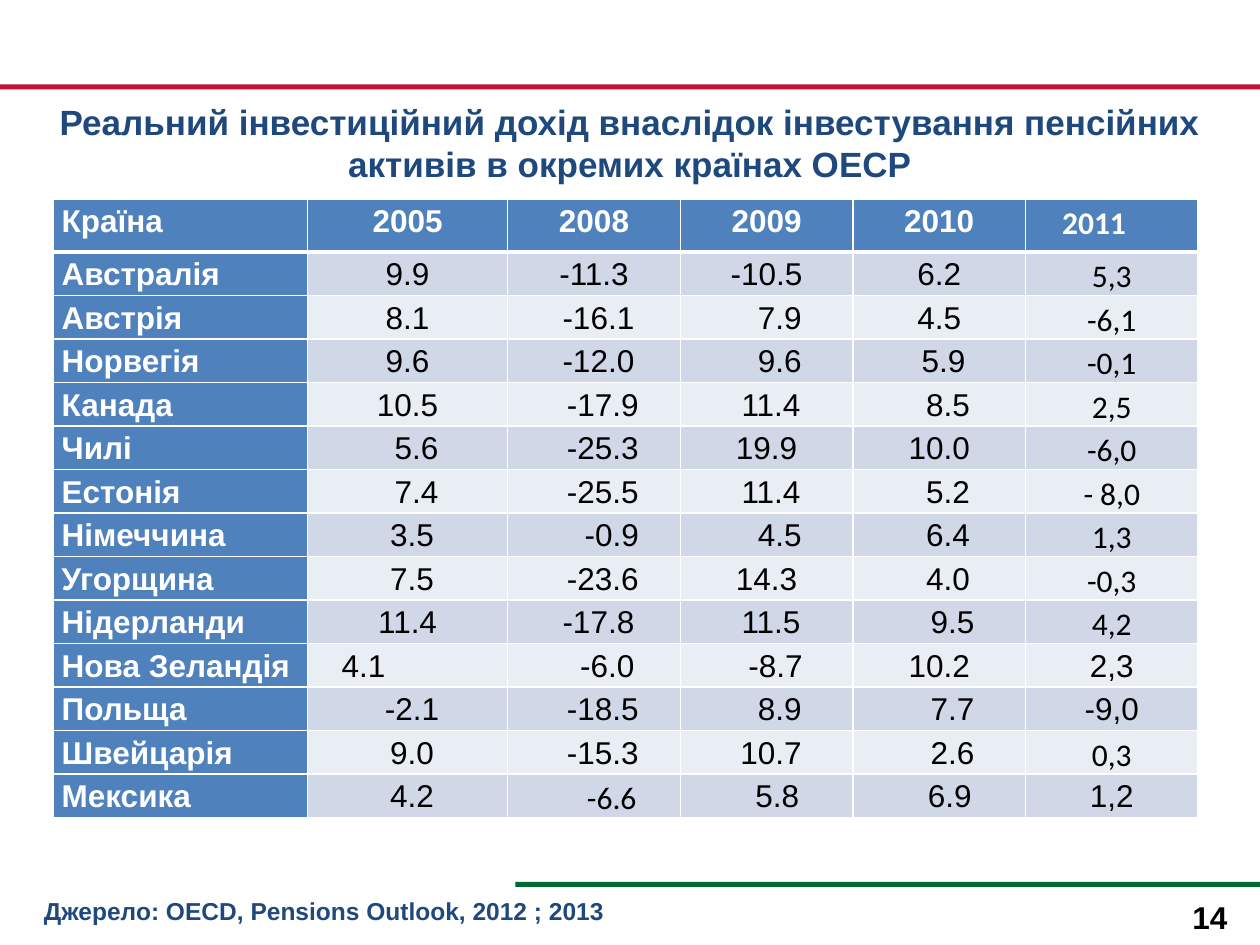
from lxml import etree
from pptx import Presentation, util as u
from pptx.dml.color import RGBColor
from pptx.enum import shapes, text
from pptx.oxml import ns

INK = {"red": "C2113A", "green": "006633", "navy": "1F497D", "blue": "4F81BD",
       "odd": "D0D8E8", "even": "E9EDF4", "white": "FFFFFF", "black": "000000"}
LEFT, MID, RIGHT = text.PP_ALIGN.LEFT, text.PP_ALIGN.CENTER, text.PP_ALIGN.RIGHT
PAD, STEP = 0.07, 0.07
WIDTHS = [2.02, 1.59] + [1.37] * 4
HEAD, HIGH = 0.42, 4.9
YEARS = ("Країна", "2005", "2008", "2009", "2010", "2011")
LANDS = [
    ("Австралія", "9.9", "-11.3", "-10.5", "6.2", "5,3"),
    ("Австрія", "8.1", "-16.1", "7.9", "4.5", "-6,1"),
    ("Норвегія", "9.6", "-12.0", "9.6", "5.9", "-0,1"),
    ("Канада", "10.5", "-17.9", "11.4", "8.5", "2,5"),
    ("Чилі", "5.6", "-25.3", "19.9", "10.0", "-6,0"),
    ("Естонія", "7.4", "-25.5", "11.4", "5.2", "- 8,0"),
    ("Німеччина", "3.5", "-0.9", "4.5", "6.4", "1,3"),
    ("Угорщина", "7.5", "-23.6", "14.3", "4.0", "-0,3"),
    ("Нідерланди", "11.4", "-17.8", "11.5", "9.5", "4,2"),
    ("Нова Зеландія", "4.1", "-6.0", "-8.7", "10.2", "2,3"),
    ("Польща", "-2.1", "-18.5", "8.9", "7.7", "-9,0"),
    ("Швейцарія", "9.0", "-15.3", "10.7", "2.6", "0,3"),
    ("Мексика", "4.2", "-6.6", "5.8", "6.9", "1,2"),
]
SHIFTS = [
    (0, 0, 0, 0, 0, -4),
    (0, 0, 0, 0, 0, 0), (0, 0, 1, 3, 0, 0), (0, 0, 1, 3, 1, 0),
    (0, 0, 2, 1, 2, 0), (0, 2, 2, 0, 0, 0), (0, 2, 2, 1, 2, 0),
    (0, 1, 4, 3, 2, 0), (0, 1, 2, 0, 2, 0), (0, 0, 1, 1, 3, 0),
    (0, -10, 3, 2, 0, 0), (0, 1, 2, 3, 3, 0), (0, 1, 2, 1, 3, 0),
    (0, 1, 4, 2.4, 2.4, 0),
]
ARIAL = {(10, 5), (11, 5), (13, 5)}


def hue(name):
    return RGBColor.from_string(INK[name])


def write(frame, words, size=18, font="Arial", color="black", bold=True,
          align=LEFT, line=None):
    para = frame.paragraphs[0]
    para.alignment = align
    if line:
        para.line_spacing = line
    run = para.add_run()
    run.text = words
    face = run.font
    face.size, face.name, face.bold = u.Pt(size), font, bold
    face.color.rgb = hue(color)


def label(slide, box, words, **form):
    frame = slide.shapes.add_textbox(*map(u.Inches, box)).text_frame
    frame.word_wrap = True
    write(frame, words, **form)


def bar(slide, box, color):
    rule = slide.shapes.add_shape(shapes.MSO_SHAPE.RECTANGLE,
                                  *map(u.Inches, box))
    rule.shadow.inherit = False
    rule.fill.solid()
    rule.fill.fore_color.rgb = hue(color)
    rule.line.fill.background()


def edge(cell, side, width):
    line = etree.SubElement(cell._tc.get_or_add_tcPr(), ns.qn("a:ln" + side),
                            w=str(u.Pt(width)))
    fill = etree.SubElement(line, ns.qn("a:solidFill"))
    etree.SubElement(fill, ns.qn("a:srgbClr"), val=INK["white"])


def dress(cell, row, col):
    for side in "LRTB":
        thick = (row, side) in ((0, "B"), (1, "T"))
        edge(cell, side, 3 if thick else 1)
    cell.fill.solid()
    band = "odd" if row % 2 else "even"
    cell.fill.fore_color.rgb = hue(band if row and col else "blue")
    shift = SHIFTS[row][col] * STEP
    cell.margin_left = u.Inches(PAD + max(shift, 0))
    cell.margin_right = u.Inches(PAD + max(-shift, 0))
    cell.margin_top = cell.margin_bottom = 0


def grid(slide):
    rows = [YEARS] + LANDS
    table = slide.shapes.add_table(
        len(rows), len(YEARS), u.Inches(0.42), u.Inches(1.58),
        u.Inches(sum(WIDTHS)), u.Inches(HIGH)).table
    table.first_row = table.horz_banding = False
    for col, width in enumerate(WIDTHS):
        table.columns[col].width = u.Inches(width)
    for row, words in enumerate(rows):
        step = (HIGH - HEAD) / len(LANDS)
        table.rows[row].height = u.Inches(step if row else HEAD)
        for col, word in enumerate(words):
            cell = table.cell(row, col)
            dress(cell, row, col)
            lead = row == 0 or col == 0
            light = (col == 5 and (row, col) not in ARIAL) or (row, col) == (13, 2)
            write(cell.text_frame, word, bold=lead, line=1.15,
                  font="Calibri" if light else "Arial",
                  color="white" if lead else "black",
                  align=MID if col else LEFT)


def main():
    deck = Presentation()
    deck.slide_width, deck.slide_height = u.Inches(10), u.Inches(7.5)
    slide = deck.slides.add_slide(deck.slide_layouts[6])
    bar(slide, (0, 0.67, 10, 0.04), "red")
    bar(slide, (4.09, 7, 5.91, 0.04), "green")
    label(slide, (9.33, 7.08, 0.51, 0.33), "14", align=RIGHT)
    grid(slide)
    label(slide, (0, 0.75, 10, 0.77),
          "Реальний інвестиційний дохід внаслідок інвестування пенсійних "
          "активів в окремих країнах ОЕСР", size=20, color="navy", align=MID)
    label(slide, (0.25, 7.06, 6.75, 0.36),
          "Джерело: ОЕСD, Pensions Outlook, 2012 ; 2013",
          size=14, color="navy")
    deck.save("out.pptx")


if __name__ == "__main__":
    main()
